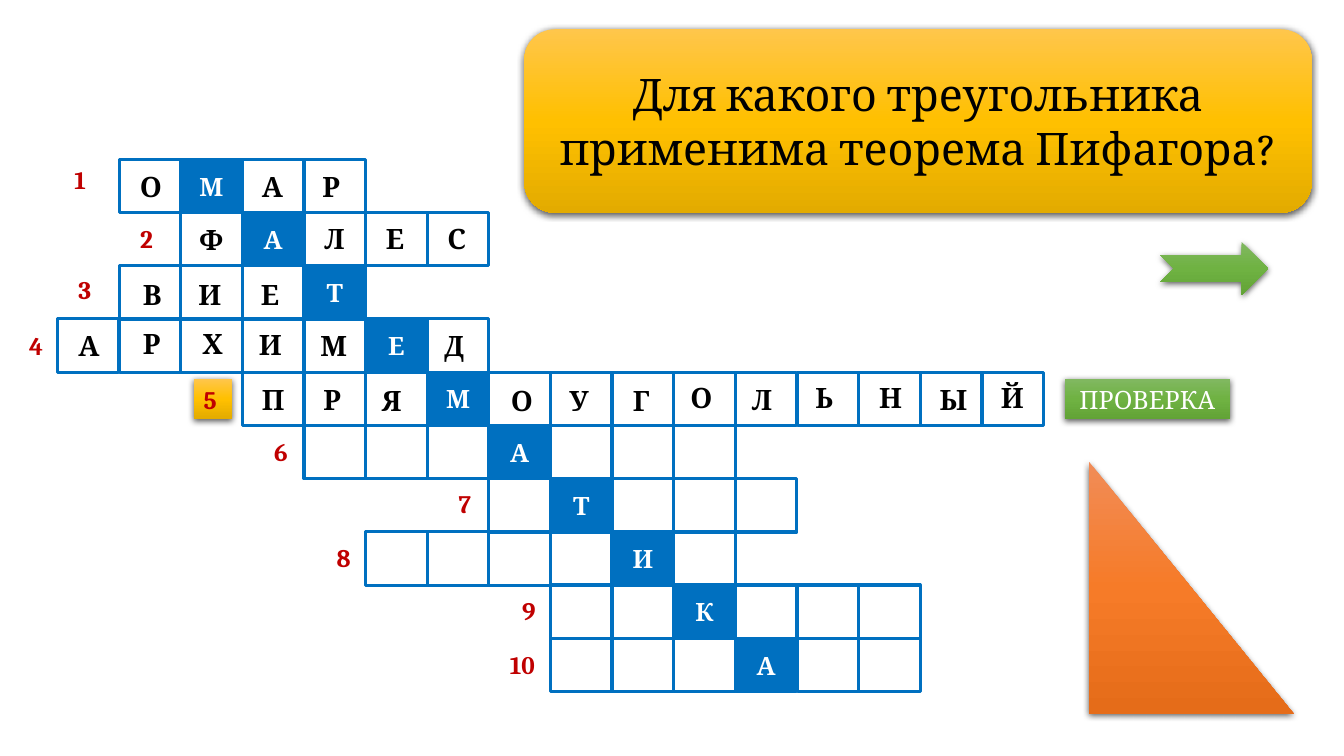
import pptx
import pptx.util
import pptx.oxml
import pptx.oxml.ns
import pptx.dml.color
import pptx.enum.shapes
import pptx.enum.text
from dataclasses import dataclass

Inches = pptx.util.Inches
Kind = pptx.enum.shapes.MSO_SHAPE
Align = pptx.enum.text.PP_ALIGN
Anchor = pptx.enum.text.MSO_ANCHOR

# Content
QUERY = "Для какого треугольника применима теорема Пифагора?"
CHECK = "ПРОВЕРКА"
KEY = "МАТЕМАТИКА"

# Each row: first column, cell count, number's left and top
ROWS = [
    (1, 4, 0.64, 1.58), (2, 5, 1.29, 2.17), (1, 4, 0.68, 2.67),
    (0, 7, 0.19, 3.23), (3, 13, 1.92, 3.76), (4, 7, 2.62, 4.28),
    (7, 5, 4.45, 4.8), (5, 6, 3.24, 5.33), (8, 6, 5.08, 5.86),
    (8, 6, 4.96, 6.39),
]
ACTIVE = 5

# Solved answers without the key letter: letter, left, top
WORDS = [
    [("О", 1.29, 1.63), ("А", 2.5, 1.63), ("Р", 3.1, 1.63)],
    [("Ф", 1.88, 2.16), ("Л", 3.12, 2.15), ("Е", 3.73, 2.15), ("С", 4.34, 2.15)],
    [("В", 1.32, 2.7), ("И", 1.87, 2.7), ("Е", 2.49, 2.7)],
    [("А", 0.68, 3.21), ("Р", 1.32, 3.19), ("Х", 1.91, 3.19),
     ("И", 2.47, 3.2), ("М", 3.08, 3.21), ("Д", 4.31, 3.21)],
    [("П", 2.5, 3.75), ("Р", 3.11, 3.75), ("Я", 3.69, 3.76), ("О", 4.97, 3.76),
     ("У", 5.55, 3.76), ("Г", 6.18, 3.76), ("О", 6.75, 3.73), ("Л", 7.36, 3.75),
     ("Ь", 7.99, 3.73), ("Н", 8.62, 3.73), ("Ы", 9.22, 3.75), ("Й", 9.83, 3.73)],
]


@dataclass
class Theme:
    font: str = "Cambria"
    blue: str = "0070C0"
    red: str = "C00000"
    white: str = "FFFFFF"
    black: str = "000000"
    gold: tuple = ("FFC64B", "FFC000", "E3AB00")
    green: tuple = ("81B861", "6FB242", "62A336")
    orange: tuple = ("F18C57", "F67B28", "E56C19")
    small: int = 18
    letter: int = 20
    title: int = 32
    edge: float = 2.25


theme = Theme()

# Grid
LEFT, TOP = 0.57, 1.58
STEP_X, STEP_Y = 0.6113, 0.528
WIDE, HIGH = 0.61, 0.53

deck = pptx.Presentation()
deck.slide_width, deck.slide_height = Inches(13.33), Inches(7.5)
slide = deck.slides.add_slide(deck.slide_layouts[6])


def rgb(code):
    return pptx.dml.color.RGBColor.from_string(code)


def write(shape, text, size, color, bold=True, center=False):
    frame = shape.text_frame
    frame.text = text
    frame.vertical_anchor = Anchor.MIDDLE if center else Anchor.TOP
    line = frame.paragraphs[0]
    line.alignment = Align.CENTER if center else Align.LEFT
    font = line.runs[0].font
    font.name, font.size, font.bold = theme.font, pptx.util.Pt(size), bold
    font.color.rgb = rgb(color)


def place(kind, box):
    return slide.shapes.add_shape(kind, *map(Inches, box))


def cell(col, row, text=""):
    shape = place(Kind.RECTANGLE,
                  (LEFT + col * STEP_X, TOP + row * STEP_Y, WIDE, HIGH))
    shape.shadow.inherit = False
    shape.line.color.rgb = rgb(theme.blue)
    shape.line.width = pptx.util.Pt(theme.edge)
    if text:
        shape.fill.solid()
        shape.fill.fore_color.rgb = rgb(theme.blue)
        write(shape, text, theme.small, theme.white, center=True)
    else:
        shape.fill.background()


def label(text, box, size, color, wrap):
    shape = slide.shapes.add_textbox(*map(Inches, box))
    shape.text_frame.word_wrap = wrap
    write(shape, text, size, color)


def glossy(kind, box, tones):
    """Add a shape with a vertical gradient and a soft shadow."""
    shape = place(kind, box)
    props = shape.element.spPr
    space = pptx.oxml.ns.nsdecls("a")
    stops = "".join(
        f'<a:gs pos="{i * 50000}"><a:srgbClr val="{tone}"/></a:gs>'
        for i, tone in enumerate(tones))
    props.append(pptx.oxml.parse_xml(
        f'<a:gradFill {space} rotWithShape="1"><a:gsLst>{stops}</a:gsLst>'
        '<a:lin ang="5400000" scaled="0"/></a:gradFill>'))
    shape.line.fill.background()
    props.append(pptx.oxml.parse_xml(
        f'<a:effectLst {space}><a:outerShdw blurRad="57150" dist="19050" '
        'dir="5400000" algn="ctr" rotWithShape="0">'
        f'<a:srgbClr val="{theme.black}"><a:alpha val="63000"/></a:srgbClr>'
        '</a:outerShdw></a:effectLst>'))
    return shape


# Crossword cells: the key word runs down one column per row
for row, (first, count, _, _) in enumerate(ROWS):
    for col in range(first, first + count):
        cell(col, row, KEY[row] if col == row + 2 else "")

# Row numbers
for num, (_, _, left, top) in enumerate(ROWS, 1):
    box = (left, top, 0.5 if num > 9 else 0.38, 0.4)
    if num == ACTIVE:
        badge = glossy(Kind.RECTANGLE, box, theme.gold)
        write(badge, str(num), theme.small, theme.red)
    else:
        label(str(num), box, theme.small, theme.red, True)

# Answer letters
for word in WORDS:
    for text, left, top in word:
        label(text, (left, top, 0.4, 0.44), theme.letter, theme.black, False)

# Question, buttons and triangle
panel = glossy(Kind.ROUNDED_RECTANGLE, (5.2, 0.29, 7.81, 1.82), theme.gold)
write(panel, QUERY, theme.title, theme.black, bold=False, center=True)
button = glossy(Kind.RECTANGLE, (10.56, 3.76, 1.64, 0.4), theme.green)
write(button, CHECK, theme.small, theme.white, bold=False, center=True)
glossy(Kind.NOTCHED_RIGHT_ARROW, (11.51, 2.4, 1.07, 0.53), theme.green)
glossy(Kind.RIGHT_TRIANGLE, (10.8, 4.58, 2.03, 2.5), theme.orange)

deck.save("out.pptx")
